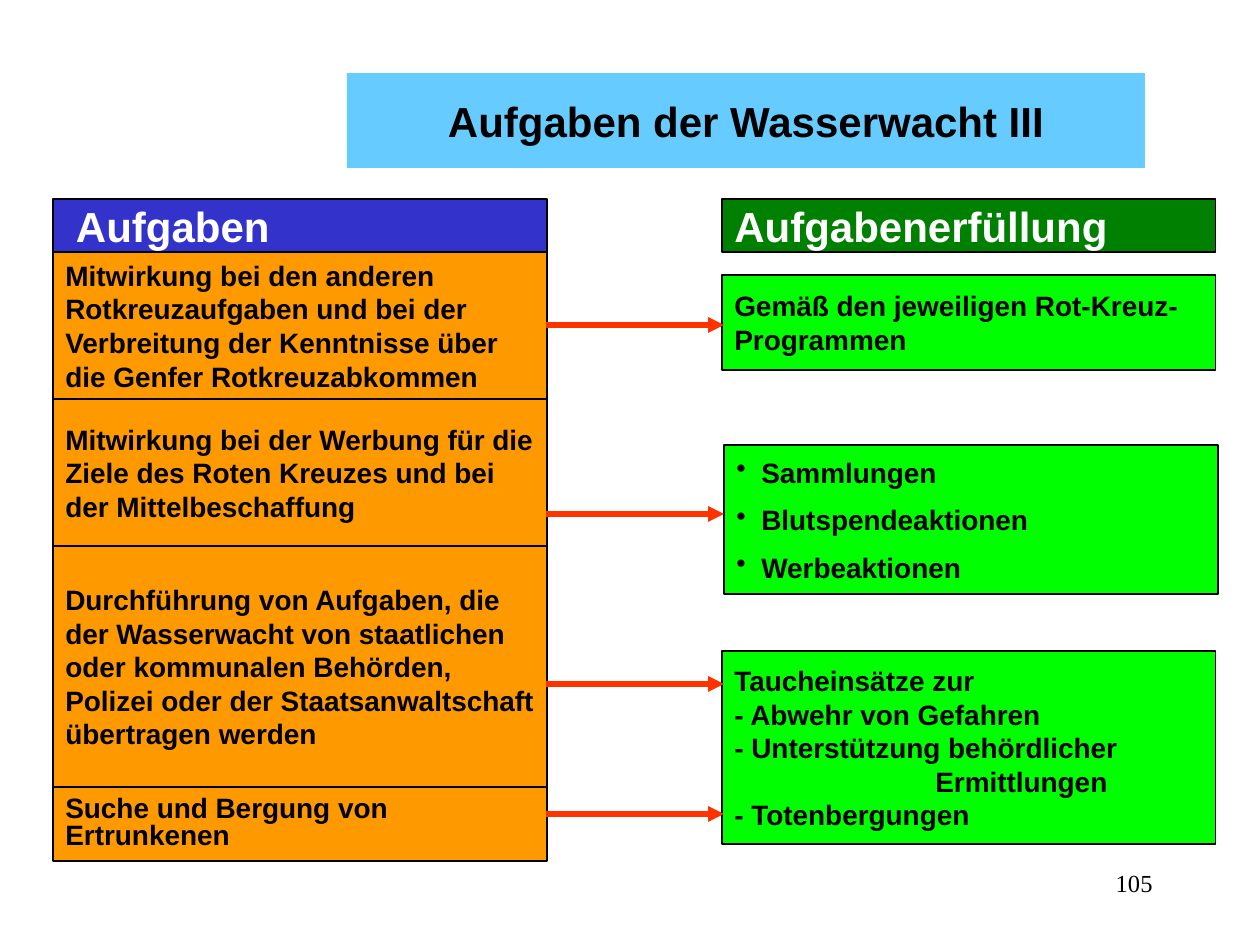
from pptx import Presentation
from pptx.dml.color import RGBColor
from pptx.enum.shapes import MSO_CONNECTOR, MSO_SHAPE
from pptx.enum.text import MSO_ANCHOR, PP_ALIGN
from pptx.oxml.ns import qn
from pptx.util import Emu, Pt
from lxml import etree

RECTANGLE = MSO_SHAPE.RECTANGLE
STRAIGHT = MSO_CONNECTOR.STRAIGHT
LEFT, CENTER, RIGHT = PP_ALIGN.LEFT, PP_ALIGN.CENTER, PP_ALIGN.RIGHT
MIDDLE = MSO_ANCHOR.MIDDLE
PX = 914400 // 126

BLACK, WHITE = "000000", "FFFFFF"
SKY, BLUE, DARK_GREEN = "66CCFF", "3333CC", "008000"
ORANGE, GREEN, RED = "FF9900", "00FF00", "FF3300"

# Content
TITLE = "Aufgaben der Wasserwacht III"
PAGE_NUMBER = "105"
TASKS_HEADING = "Aufgaben"
FULFILMENT_HEADING = "Aufgabenerfüllung"
TASKS = [  # text, height, line spacing
    ("Mitwirkung bei den anderen Rotkreuzaufgaben und bei der Verbreitung "
     "der Kenntnisse über die Genfer Rotkreuzabkommen", 147, None),
    ("Mitwirkung bei der Werbung für die Ziele des Roten Kreuzes und bei "
     "der Mittelbeschaffung", 147, None),
    ("Durchführung von Aufgaben, die der Wasserwacht von staatlichen oder "
     "kommunalen Behörden, Polizei oder der Staatsanwaltschaft übertragen "
     "werden", 241, None),
    ("Suche und Bergung von Ertrunkenen", 74, 0.8),
]
PROGRAMMES = ["Gemäß den jeweiligen Rot-Kreuz-Programmen"]
CAMPAIGNS = ["Sammlungen", "Blutspendeaktionen", "Werbeaktionen"]
DIVES = ["Taucheinsätze zur", "- Abwehr von Gefahren",
         "- Unterstützung behördlicher", "Ermittlungen", "- Totenbergungen"]

# Layout in px
TASKS_LEFT, FULFILMENT_LEFT, COLUMN_WIDTH = 53, 722, 494
HEADING_TOP, HEADING_HEIGHT = 199, 53
ARROW_ROWS = [325, 514, 684, 814]
BULLET_INDENT, WORD_INDENT = 25, 201


def px(length):
    return Emu(length * PX)


def color(value):
    return RGBColor.from_string(value)


def write(box, lines, size, ink=BLACK, align=LEFT, font="Arial", bold=True):
    frame = box.text_frame
    frame.word_wrap = True
    frame.vertical_anchor = MIDDLE
    frame.text = "\n".join(lines)
    for para in frame.paragraphs:
        para.alignment = align
        para.font.name = font
        para.font.size = Pt(size)
        para.font.bold = bold
        para.font.color.rgb = color(ink)
    return frame.paragraphs


def add_panel(left, top, width, height, fill, lines, size=16, ink=BLACK,
              align=LEFT, outlined=True):
    panel = page.shapes.add_shape(
        RECTANGLE, px(left), px(top), px(width), px(height))
    panel.shadow.inherit = False
    panel.fill.solid()
    panel.fill.fore_color.rgb = color(fill)
    if outlined:
        panel.line.color.rgb = color(BLACK)
        panel.line.width = Pt(0.75)
    else:
        panel.line.fill.background()
    write(panel, lines, size, ink, align)
    return panel


def indent(para, left, first=0):
    properties = para._p.get_or_add_pPr()
    properties.set("marL", str(left * PX))
    properties.set("indent", str(first * PX))
    return properties


def add_bullet(para):
    properties = indent(para, BULLET_INDENT, -BULLET_INDENT)
    bullet = etree.Element(qn("a:buChar"), char="•")
    # Bullets precede the default run properties
    properties.insert_element_before(bullet, "a:tabLst", "a:defRPr", "a:extLst")


def add_arrow(y):
    arrow = page.shapes.add_connector(STRAIGHT, px(546), px(y), px(724), px(y))
    arrow.line.color.rgb = color(RED)
    arrow.line.width = Pt(3)
    etree.SubElement(arrow.line._get_or_add_ln(), qn("a:tailEnd"), type="triangle")
    etree.SubElement(arrow._element.spPr, qn("a:effectLst"))


deck = Presentation()
deck.slide_width, deck.slide_height = px(1260), px(945)
page = deck.slides.add_slide(deck.slide_layouts[6])

# Title and page number
add_panel(347, 73, 798, 95, SKY, [TITLE], 24, align=CENTER, outlined=False)
number = page.shapes.add_textbox(px(903), px(851), px(262), px(63))
write(number, [PAGE_NUMBER], 14, align=RIGHT, font="Times New Roman", bold=False)

# Column headings
tasks_heading = add_panel(TASKS_LEFT, HEADING_TOP, COLUMN_WIDTH, HEADING_HEIGHT,
                          BLUE, [TASKS_HEADING], 24, WHITE)
tasks_heading.text_frame.margin_left = px(23)
add_panel(FULFILMENT_LEFT, HEADING_TOP, COLUMN_WIDTH, HEADING_HEIGHT,
          DARK_GREEN, [FULFILMENT_HEADING], 24, WHITE)

# Stacked tasks
top = HEADING_TOP + HEADING_HEIGHT
for text, height, spacing in TASKS:
    task = add_panel(TASKS_LEFT, top, COLUMN_WIDTH, height, ORANGE, [text])
    if spacing:
        task.text_frame.paragraphs[0].line_spacing = spacing
    top += height

# Fulfilment panels
add_panel(FULFILMENT_LEFT, 275, COLUMN_WIDTH, 95, GREEN, PROGRAMMES)
campaigns = add_panel(FULFILMENT_LEFT + 2, 445, COLUMN_WIDTH, 149, GREEN, CAMPAIGNS)
for position, para in enumerate(campaigns.text_frame.paragraphs):
    add_bullet(para)
    if position:
        para.space_before = Pt(8)
dives = add_panel(FULFILMENT_LEFT, 651, COLUMN_WIDTH, 193, GREEN, DIVES)
indent(dives.text_frame.paragraphs[DIVES.index("Ermittlungen")], WORD_INDENT)

# Arrows from task to fulfilment
for row in ARROW_ROWS:
    add_arrow(row)

deck.save("out.pptx")
